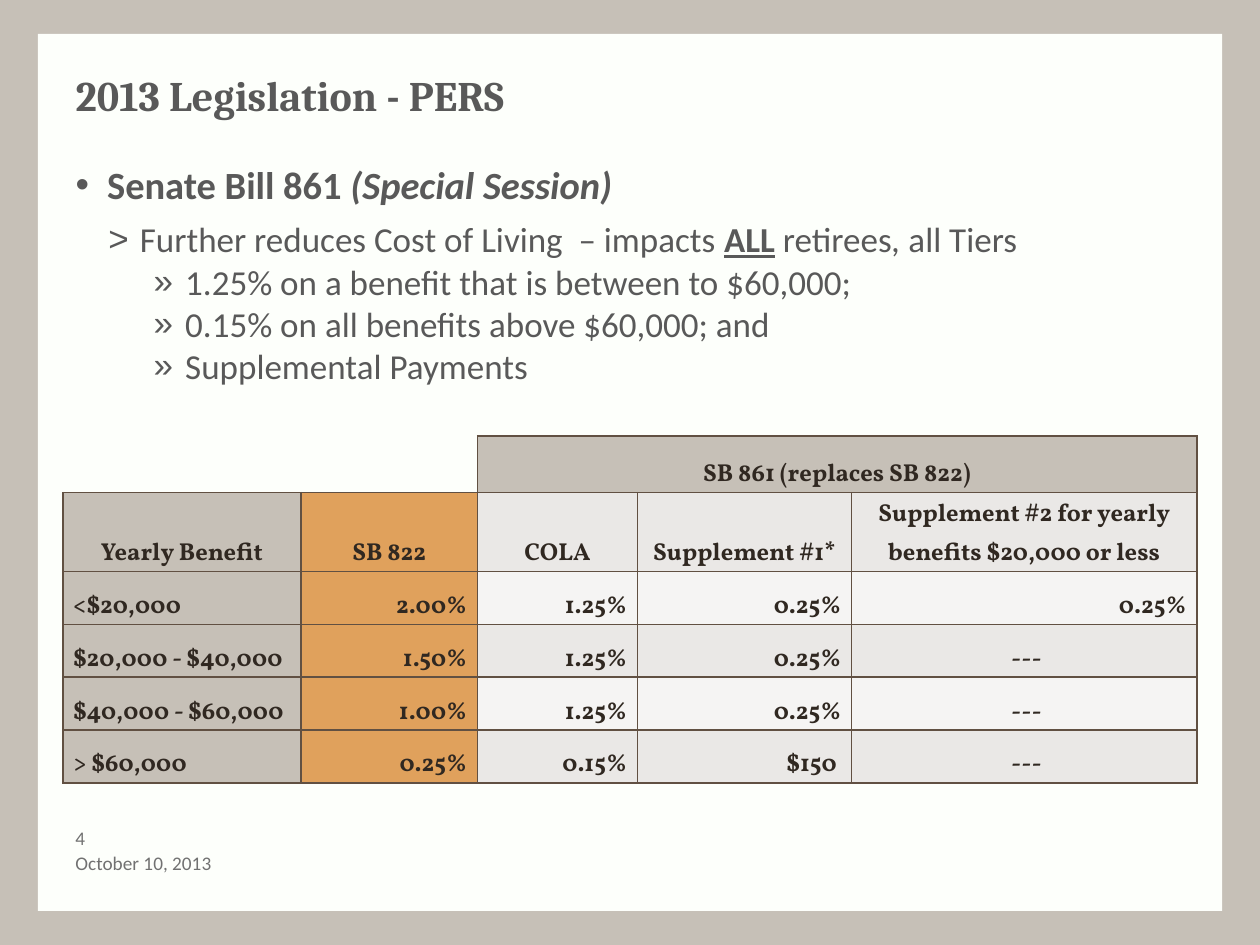
from dataclasses import dataclass

from lxml.etree import SubElement
from pptx import Presentation
from pptx.dml.color import RGBColor
from pptx.enum.shapes import MSO_SHAPE
from pptx.enum.text import MSO_ANCHOR, MSO_AUTO_SIZE, PP_ALIGN
from pptx.oxml import parse_xml
from pptx.oxml.ns import nsdecls, qn
from pptx.util import Inches, Pt


@dataclass(frozen=True)
class Theme:
    frame: str = "C6C0B7"
    panel: str = "FDFFFB"
    text: str = "595959"
    footer: str = "717171"
    cell_text: str = "302821"
    border: str = "615042"
    accent: str = "E0A15C"
    band: str = "EAE8E6"
    light: str = "F5F4F3"
    title_font: str = "Cambria"
    body_font: str = "Calibri"
    table_font: str = "Vollkorn"
    title_size: int = 24
    lead_size: int = 22
    body_size: int = 20
    table_size: int = 14
    footer_size: int = 11


def add_text(p, text, font, size, color, bold=False, italic=False, underline=False):
    r = p.add_run()
    r.text = text
    f = r.font
    f.name, f.size = font, Pt(size)
    f.bold, f.italic, f.underline = bold, italic, underline
    f.color.rgb = RGBColor.from_string(color)


class SlideBuilder:
    def __init__(self, prs, theme):
        self.theme = theme
        self.s = prs.slides.add_slide(prs.slide_layouts[1])
        fill = self.s.background.fill
        fill.solid()
        fill.fore_color.rgb = RGBColor.from_string(theme.frame)

    def place(self, sp, x, y, w, h):
        sp.left, sp.top, sp.width, sp.height = map(Inches, (x, y, w, h))

    def panel(self, x, y, w, h):
        sp = self.s.shapes.add_shape(MSO_SHAPE.RECTANGLE, *map(Inches, (x, y, w, h)))
        sp.shadow.inherit = False
        sp.fill.solid()
        sp.fill.fore_color.rgb = RGBColor.from_string(self.theme.panel)
        sp.line.fill.background()
        tree = self.s.shapes.element
        tree.remove(sp.element)
        tree.insert(2, sp.element)

    def title(self, text, x, y, w, h):
        t = self.theme
        sp = self.s.shapes.title
        self.place(sp, x, y, w, h)
        tf = sp.text_frame
        tf.vertical_anchor = MSO_ANCHOR.TOP
        p = tf.paragraphs[0]
        p.alignment = PP_ALIGN.LEFT
        add_text(p, text, t.title_font, t.title_size, t.text, bold=True)

    def body(self, items, x, y, w, h):
        t = self.theme
        levels = [("•", 0.25, t.lead_size), (">", 0.51, t.body_size), ("»", 0.87, t.body_size)]
        sp = self.s.placeholders[1]
        self.place(sp, x, y, w, h)
        tf = sp.text_frame
        tf.auto_size = MSO_AUTO_SIZE.NONE
        for i, (level, runs) in enumerate(items):
            p = tf.add_paragraph() if i else tf.paragraphs[0]
            bullet, margin, size = levels[level]
            p.level = level
            pPr = p._p.get_or_add_pPr()
            pPr.set("marL", str(Inches(margin)))
            pPr.set("indent", str(Inches(-0.25)))
            SubElement(pPr, qn("a:buChar")).set("char", bullet)
            p.space_before = Pt(6 if level == 1 else 0)
            for text, style in runs:
                add_text(p, text, t.body_font, size, t.text, **style)

    def footer(self, text, x, y, w, h, right=0.1):
        t = self.theme
        tf = self.s.shapes.add_textbox(*map(Inches, (x, y, w, h))).text_frame
        tf.word_wrap = True
        tf.vertical_anchor = MSO_ANCHOR.MIDDLE
        tf.margin_left, tf.margin_right = Inches(0.1), Inches(right)
        tf.margin_top = tf.margin_bottom = 0
        add_text(tf.paragraphs[0], text, t.body_font, t.footer_size, t.footer)

    def borders(self, cell, sides):
        tcPr = cell._tc.get_or_add_tcPr()
        for i, side in enumerate("LRTB"):
            line = (f'<a:solidFill><a:srgbClr val="{self.theme.border}"/></a:solidFill>'
                    if side in sides else "<a:noFill/>")
            tcPr.insert(i, parse_xml(
                f'<a:ln{side} {nsdecls("a")} w="{Pt(1)}">{line}</a:ln{side}>'))

    def cell(self, cell, text, fill, align):
        t = self.theme
        cell.vertical_anchor = MSO_ANCHOR.BOTTOM
        cell.margin_left = cell.margin_right = Inches(0.08)
        cell.margin_top = cell.margin_bottom = 0
        if fill:
            cell.fill.solid()
            cell.fill.fore_color.rgb = RGBColor.from_string(fill)
        else:
            cell.fill.background()
        if text:
            p = cell.text_frame.paragraphs[0]
            p.alignment, p.line_spacing = align, 1.15
            add_text(p, text, t.table_font, t.table_size, t.cell_text, bold=True)

    def table(self, rows, widths, heights, x, y):
        t = self.theme
        size = map(Inches, (x, y, sum(widths), sum(heights)))
        tbl = self.s.shapes.add_table(len(rows), len(widths), *size).table
        tbl.first_row = tbl.horz_banding = False
        for col, width in zip(tbl.columns, widths):
            col.width = Inches(width)
        for row, height in zip(tbl.rows, heights):
            row.height = Inches(height)
        tbl.cell(0, 2).merge(tbl.cell(0, 4))
        for i, row in enumerate(rows):
            band = t.light if i % 2 == 0 else t.band
            fills = [t.frame, t.accent, band, band, band]
            if i == 0:
                fills = [None, None, t.frame, t.frame, t.frame]
            for j, text in enumerate(row):
                if i < 2 or "---" in text:
                    align = PP_ALIGN.CENTER
                else:
                    align = PP_ALIGN.RIGHT if j else PP_ALIGN.LEFT
                cell = tbl.cell(i, j)
                self.cell(cell, text, fills[j], align)
                self.borders(cell, "LRTB" if fills[j] else ("B", "RB")[j])


def main():
    prs = Presentation()
    prs.slide_width, prs.slide_height = Inches(10), Inches(7.5)
    b = SlideBuilder(prs, Theme())
    b.panel(0.3, 0.27, 9.4, 6.96)
    b.title("2013 Legislation - PERS", 0.5, 0.5, 9, 0.75)
    b.body([
        (0, [("Senate Bill 861 ", {"bold": True}),
             ("(Special Session)", {"bold": True, "italic": True})]),
        (1, [("Further reduces Cost of Living  – impacts ", {}),
             ("ALL", {"bold": True, "underline": True}),
             (" retirees", {}), (", ", {"italic": True}), ("all Tiers", {})]),
        (2, [("1.25% on a benefit that is between to $60,000;", {})]),
        (2, [("0.15% on all benefits above $60,000; and", {})]),
        (2, [("Supplemental Payments", {})]),
    ], 0.5, 1.23, 8.84, 1.95)
    b.table([
        ["", "", "SB 861 (replaces SB 822)", "", ""],
        ["Yearly Benefit", "SB 822", "COLA", "Supplement #1*",
         "Supplement #2 for yearly benefits $20,000 or less"],
        ["<$20,000", "2.00%", "1.25%", "0.25%", "0.25%"],
        ["$20,000 - $40,000", "1.50%", "1.25%", "0.25%", " ---"],
        ["$40,000 - $60,000", "1.00%", "1.25%", "0.25%", " ---"],
        ["> $60,000", "0.25%", "0.15%", "$150 ", " ---"],
    ], [1.89, 1.4, 1.27, 1.7, 2.74], [0.45, 0.46] + [0.42] * 4, 0.5, 3.46)
    b.footer("October 10, 2013", 0.5, 6.75, 2, 0.2)
    b.footer("4", 0.5, 6.55, 0.4, 0.2, right=0)
    prs.save("out.pptx")


if __name__ == "__main__":
    main()
